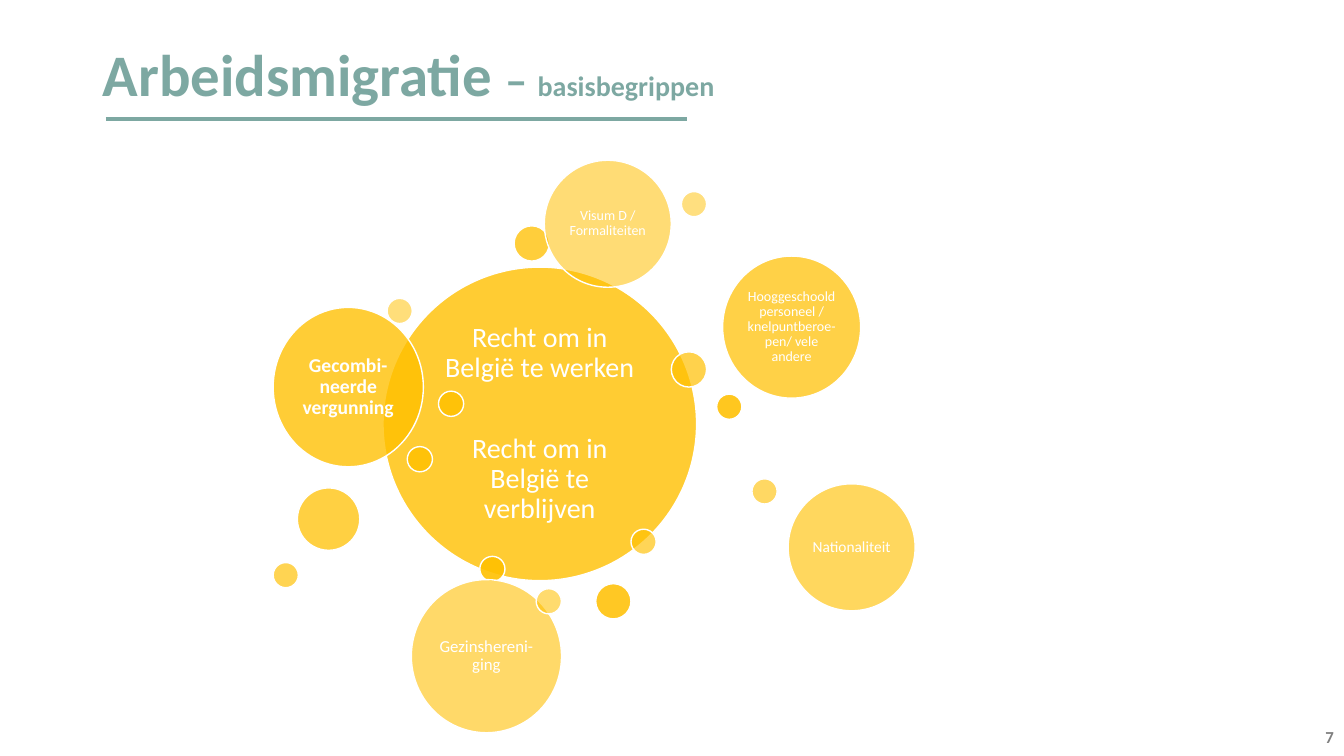
from dataclasses import dataclass

from lxml import etree
from pptx import Presentation
from pptx.dml.color import RGBColor
from pptx.enum.shapes import MSO_CONNECTOR, MSO_SHAPE
from pptx.enum.text import MSO_ANCHOR, PP_ALIGN
from pptx.oxml.ns import qn
from pptx.util import Pt

OVAL = MSO_SHAPE.OVAL
LINE = MSO_CONNECTOR.STRAIGHT
MIDDLE = MSO_ANCHOR.MIDDLE
CENTER = PP_ALIGN.CENTER
RIGHT = PP_ALIGN.RIGHT

FACE = "Calibri"
TEAL = "7DA8A2"
GOLD = "FFC000"
WHITE = "FFFFFF"
GRAY = "808080"
DOT = 18
BEAD = 25.2
FIRST = 90
LAST = 50


@dataclass
class Bubble:
    left: float
    top: float
    width: float = DOT
    height: float = 0
    text: str = ""
    size: float = 0
    inset: float = 0
    bold: bool = False


CORE = Bubble(273.6, 190.8, 224, 0,
              "Recht om in België te werken\nRecht om in België te verblijven",
              20, 5.8)

RING = [
    Bubble(342.7, 397.4),
    Bubble(511.9, 281.5),
    Bubble(425.5, 416.9, BEAD),
    Bubble(313.2, 279.4),
    Bubble(290.9, 319),
    Bubble(195.1, 219.6, 107.3, 113.8, "Gecombi-neerde vergunning", 14, 4.3, True),
    Bubble(367.2, 161.3, BEAD),
    Bubble(212.4, 348.5, 44.6),
    Bubble(516.2, 182.9, 98.6, 101.5,
           "Hooggeschoold personeel / knelpuntberoe-pen/ vele andere", 10, 2.9),
    Bubble(479.5, 251.3, BEAD),
    Bubble(195.1, 401.8),
    Bubble(450.7, 378),
    Bubble(563, 345.6, 90.7, 0, "Nationaliteit", 11, 3.6),
    Bubble(537.1, 342),
    Bubble(293.8, 414, 107.3, 109.4, "Gezinshereni-ging", 12, 3.6),
    Bubble(383, 420.5),
    Bubble(388.8, 114.5, 90.7, 0, "Visum D / Formaliteiten", 10, 2.9),
    Bubble(276.5, 213.1),
    Bubble(486.7, 136.8),
]


def color(code: str) -> RGBColor:
    return RGBColor.from_string(code)


def style(run, size: float, code: str, bold: bool) -> None:
    run.font.name = FACE
    run.font.size = Pt(size)
    run.font.bold = bold
    run.font.color.rgb = color(code)


def draw_label(shape, item: Bubble) -> None:
    frame = shape.text_frame
    frame.text = item.text
    frame.word_wrap = True
    frame.vertical_anchor = MIDDLE
    frame.margin_left = frame.margin_right = Pt(item.inset)
    frame.margin_top = frame.margin_bottom = Pt(item.inset)
    for rank, para in enumerate(frame.paragraphs):
        para.alignment = CENTER
        para.line_spacing = 0.9
        if rank:
            para.space_before = Pt(36)
        for run in para.runs:
            style(run, item.size, WHITE, item.bold)


def draw_bubble(slide, item: Bubble, alpha: float) -> None:
    shape = slide.shapes.add_shape(
        OVAL, Pt(item.left), Pt(item.top),
        Pt(item.width), Pt(item.height or item.width))
    shape.shadow.inherit = False
    shape.fill.solid()
    shape.fill.fore_color.rgb = color(GOLD)
    tint = shape._element.spPr.find(qn("a:solidFill")).find(qn("a:srgbClr"))
    etree.SubElement(tint, qn("a:alpha")).set("val", str(round(alpha * 1000)))
    shape.line.color.rgb = color(WHITE)
    shape.line.width = Pt(1)
    if item.text:
        draw_label(shape, item)


def draw_title(slide) -> None:
    box = slide.shapes.add_textbox(Pt(66.2), Pt(28.8), Pt(828), Pt(71.3))
    box.text_frame.word_wrap = True
    para = box.text_frame.paragraphs[0]
    para.line_spacing = 0.9
    for text, size in (("Arbeidsmigratie ", 42), ("– ", 32), ("basisbegrippen", 20)):
        run = para.add_run()
        run.text = text
        style(run, size, TEAL, True)


def draw_rule(slide) -> None:
    rule = slide.shapes.add_connector(LINE, Pt(75.6), Pt(85), Pt(491), Pt(85))
    rule.line.color.rgb = color(TEAL)
    rule.line.width = Pt(2.25)
    etree.SubElement(rule._element.spPr, qn("a:effectLst"))


def draw_number(slide) -> None:
    box = slide.shapes.add_textbox(Pt(743.8), Pt(511.9), Pt(216), Pt(28.8))
    frame = box.text_frame
    frame.text = "7"
    frame.word_wrap = True
    frame.vertical_anchor = MIDDLE
    para = frame.paragraphs[0]
    para.alignment = RIGHT
    style(para.runs[0], 12, GRAY, True)


def main() -> None:
    deck = Presentation()
    deck.slide_width = Pt(960)
    deck.slide_height = Pt(540)
    slide = deck.slides.add_slide(deck.slide_layouts[6])
    draw_rule(slide)
    draw_number(slide)
    draw_title(slide)
    draw_bubble(slide, CORE, 80)
    step = (FIRST - LAST) / (len(RING) - 1)
    for rank, item in enumerate(RING):
        draw_bubble(slide, item, FIRST - rank * step)
    deck.save("out.pptx")


if __name__ == "__main__":
    main()
